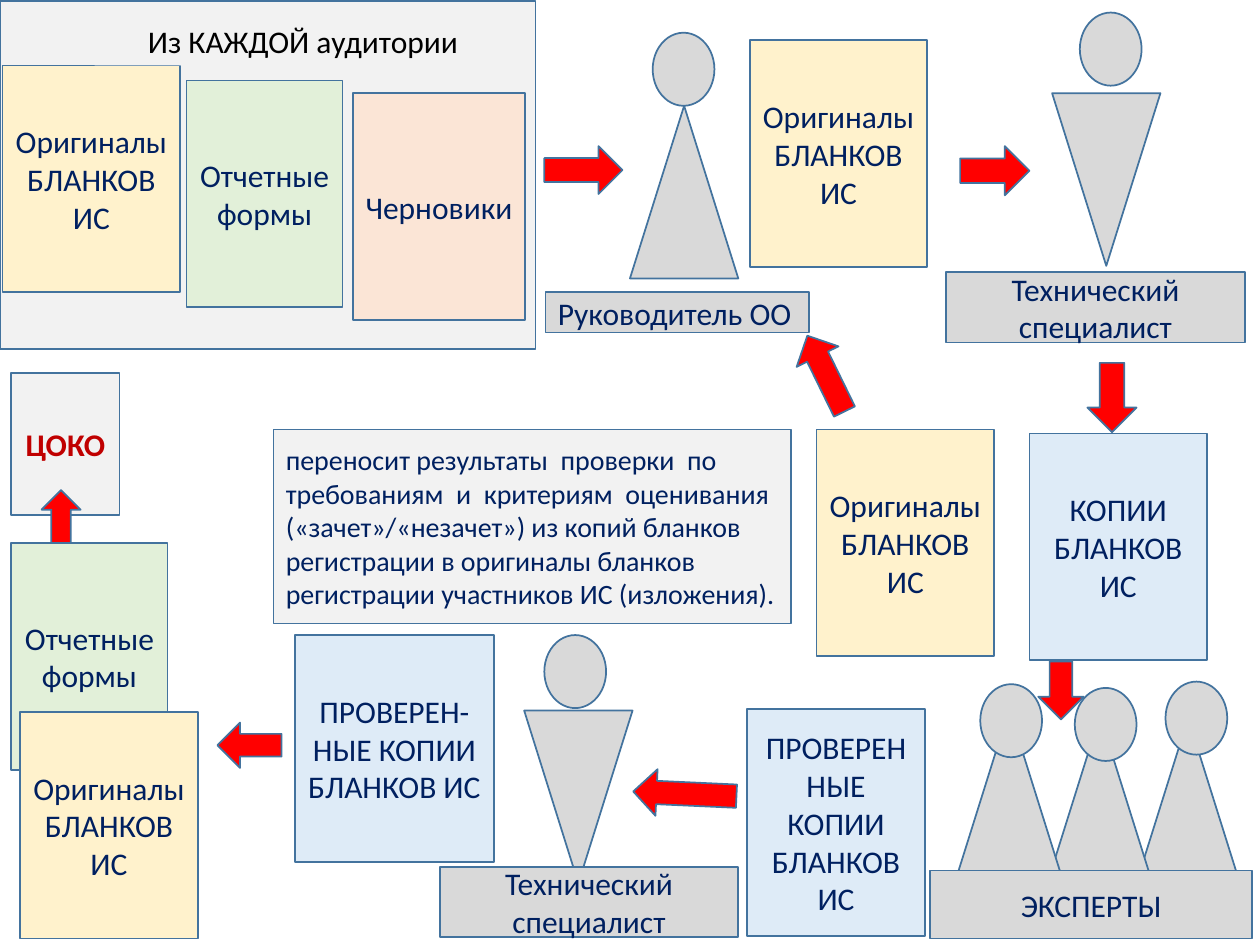
import pptx
import pptx.dml.color
import pptx.enum.shapes
import pptx.enum.text
import pptx.util

EMU_PER_PX = 9144
COLORS = {
    "outline": "43739E",
    "text": "002060",
    "black": "000000",
    "accent": "C00000",
    "arrow": "FF0000",
    "person": "D9D9D9",
    "panel": "F2F2F2",
    "originals": "FFF2CC",
    "reports": "E2F0D9",
    "drafts": "FBE5D6",
    "copies": "DEEBF7",
}
PRESETS = pptx.enum.shapes.MSO_SHAPE
ALIGN = pptx.enum.text.PP_ALIGN
FORM_HEIGHT = 180
FORM_WIDTH = 141
REPORT_WIDTH = 124


def px(length):
    """Turn whole pixels into EMU."""
    return pptx.util.Emu(length * EMU_PER_PX)


def rgb(name):
    """Look up a palette colour."""
    return pptx.dml.color.RGBColor.from_string(COLORS[name])


def add_figure(slide, preset, x, y, width, height, fill, rotation=0, outlined=True):
    """Add a filled preset shape without a shadow."""
    figure = slide.shapes.add_shape(preset, px(x), px(y), px(width), px(height))
    figure.shadow.inherit = False
    figure.rotation = rotation
    figure.fill.solid()
    figure.fill.fore_color.rgb = rgb(fill)
    if outlined:
        figure.line.color.rgb = rgb("outline")
        figure.line.width = pptx.util.Pt(1)
    else:
        figure.line.fill.background()
    return figure


def write_text(figure, text, size=18, color="text", bold=False, align=ALIGN.CENTER):
    """Write one paragraph per line of text into a figure."""
    frame = figure.text_frame
    frame.word_wrap = True
    frame.vertical_anchor = pptx.enum.text.MSO_ANCHOR.MIDDLE
    frame.text = text
    for paragraph in frame.paragraphs:
        paragraph.alignment = align
        for run in paragraph.runs:
            run.font.name = "Calibri"
            run.font.size = pptx.util.Pt(size)
            run.font.bold = bold
            run.font.color.rgb = rgb(color)


def add_box(slide, x, y, width, height, fill, text, outlined=True, **text_format):
    """Add a rectangle with text."""
    box = add_figure(slide, PRESETS.RECTANGLE, x, y, width, height, fill, outlined=outlined)
    write_text(box, text, **text_format)


def add_originals(slide, x, y):
    """Add a box for the original forms."""
    add_box(slide, x, y, FORM_WIDTH, FORM_HEIGHT, "originals", "Оригиналы БЛАНКОВ ИС")


def add_reports(slide, x, y):
    """Add a box for the report forms."""
    add_box(slide, x, y, REPORT_WIDTH, FORM_HEIGHT, "reports", "Отчетные формы")


def add_copies(slide, x, y, text, width=FORM_WIDTH):
    """Add a box for copies of the forms."""
    add_box(slide, x, y, width, FORM_HEIGHT, "copies", f"{text}\nБЛАНКОВ ИС")


def add_arrow(slide, x, y, width, height, rotation=0, preset=PRESETS.RIGHT_ARROW):
    """Add a red block arrow."""
    add_figure(slide, preset, x, y, width, height, "arrow", rotation)


def add_people(slide, bodies, heads, rotation=0):
    """Add triangular bodies with round heads in front of them."""
    for x, y in bodies:
        add_figure(slide, PRESETS.ISOSCELES_TRIANGLE, x, y, 86, 137, "person", rotation)
    for x, y in heads:
        add_figure(slide, PRESETS.OVAL, x, y, 49, 58, "person")


def add_specialist(slide, body, head, label):
    """Add a technical specialist with a caption."""
    add_people(slide, [body], [head], rotation=180)
    add_box(slide, *label, 237, 56, "person", "Технический специалист")


def add_classroom(slide):
    """Add the panel of materials from each classroom."""
    add_figure(slide, PRESETS.RECTANGLE, 0, 1, 425, 276, "panel")
    add_originals(slide, 2, 52)
    add_reports(slide, 148, 64)
    add_box(slide, 280, 74, 137, FORM_HEIGHT, "drafts", "Черновики")
    add_box(slide, 75, 13, 331, 39, "panel", "Из КАЖДОЙ аудитории",
            outlined=False, color="black")


def add_handover(slide):
    """Add the way from the head of the school to the technical specialist."""
    add_arrow(slide, 432, 116, 62, 38)
    add_people(slide, [(500, 84)], [(518, 26)])
    add_box(slide, 433, 232, 209, 32, "person", "Руководитель ОО", align=ALIGN.LEFT)
    add_arrow(slide, 762, 116, 55, 39)
    add_specialist(slide, (835, 74), (857, 10), (751, 216))
    add_originals(slide, 595, 32)


def add_review(slide):
    """Add the copying of forms and their review by experts."""
    add_arrow(slide, 855, 296, 55, 39, rotation=90)
    add_copies(slide, 817, 344, "КОПИИ")
    add_originals(slide, 648, 341)
    add_arrow(slide, 819, 530, 46, 36, rotation=90)
    add_arrow(slide, 622, 278, 67, 37, rotation=243.9)
    add_people(slide, [(900, 570), (830, 568), (758, 563)],
               [(925, 541), (853, 546), (778, 543)])
    add_box(slide, 738, 691, 256, 54, "person", "ЭКСПЕРТЫ")


def add_transfer(slide):
    """Add the transfer of results into the original forms."""
    add_arrow(slide, 525, 589, 37, 82, rotation=92.6, preset=PRESETS.DOWN_ARROW)
    add_copies(slide, 593, 563, "ПРОВЕРЕННЫЕ КОПИИ")
    add_specialist(slide, (416, 564), (432, 504), (349, 688))
    add_copies(slide, 234, 504, "ПРОВЕРЕН-НЫЕ КОПИИ", width=158)
    add_arrow(slide, 180, 566, 36, 51, rotation=90, preset=PRESETS.DOWN_ARROW)
    add_box(slide, 217, 341, 411, 154, "panel",
            "переносит результаты  проверки  по  требованиям  и  критериям  оценивания  "
            "(«зачет»/«незачет») из копий бланков регистрации в оригиналы бланков "
            "регистрации участников ИС (изложения).", size=16, align=ALIGN.LEFT)


def add_delivery(slide):
    """Add the delivery of materials to the assessment centre."""
    add_box(slide, 9, 296, 86, 113, "panel", "ЦОКО", color="accent", bold=True)
    add_arrow(slide, 24, 398, 49, 31, rotation=270)
    add_reports(slide, 9, 431)
    add_originals(slide, 16, 565)


def main():
    """Build and save the slide."""
    deck = pptx.Presentation()
    deck.slide_width = px(1000)
    deck.slide_height = px(750)
    slide = deck.slides.add_slide(deck.slide_layouts[6])
    add_classroom(slide)
    add_handover(slide)
    add_review(slide)
    add_transfer(slide)
    add_delivery(slide)
    deck.save("out.pptx")


if __name__ == "__main__":
    main()
